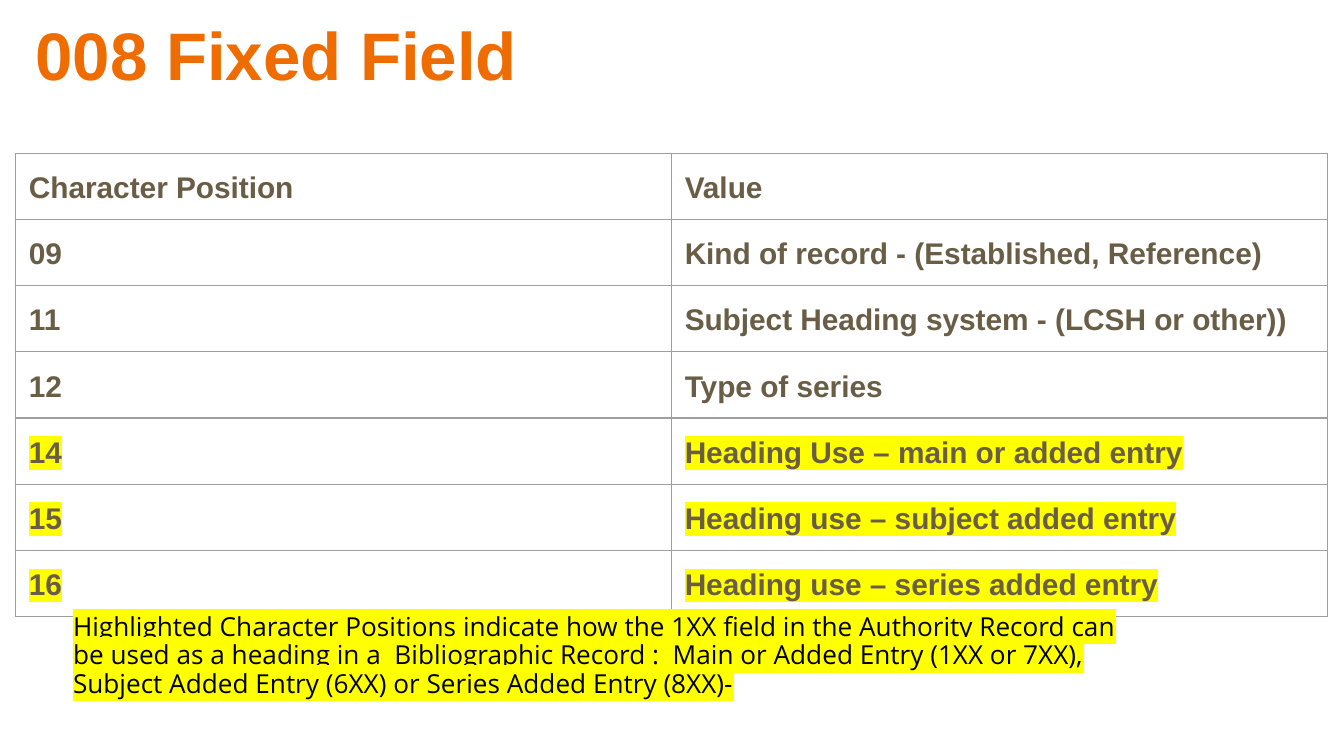
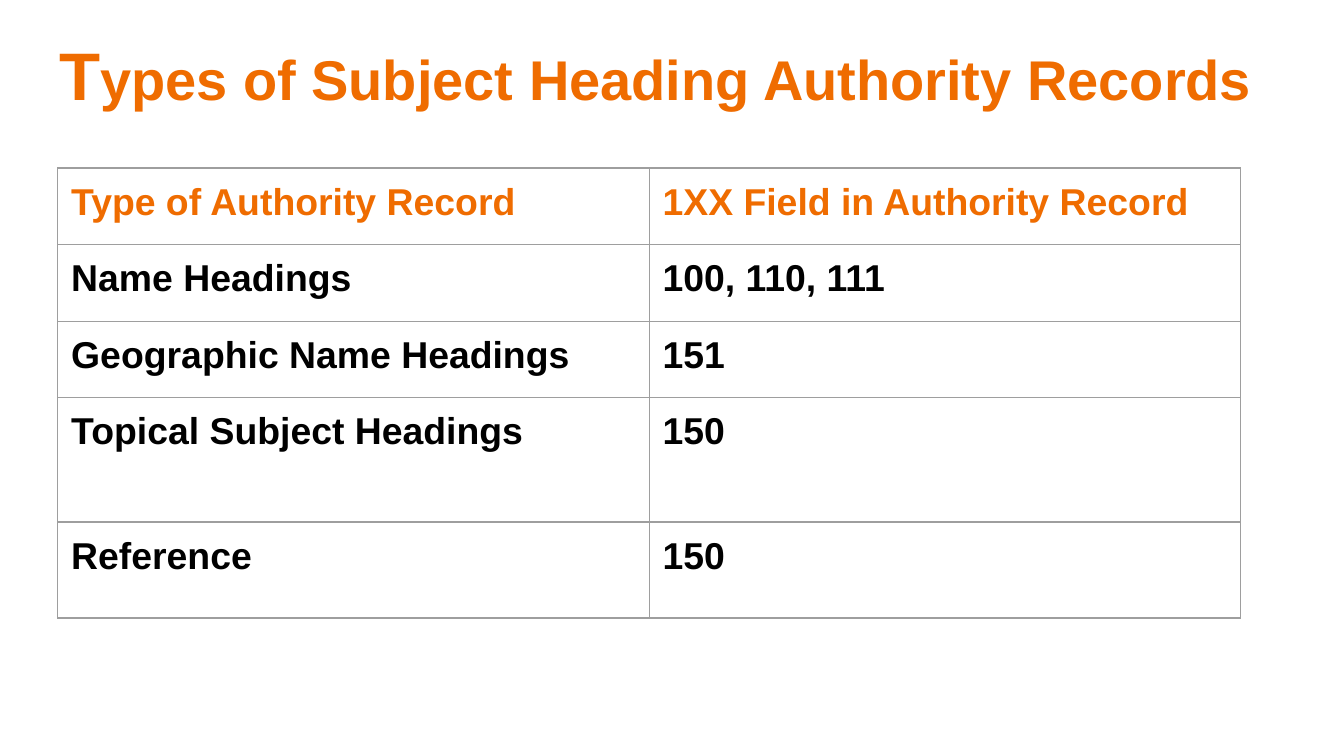
from lxml import etree
from pptx import Presentation
from pptx.dml.color import RGBColor
from pptx.enum.text import MSO_ANCHOR, MSO_AUTO_SIZE, PP_ALIGN
from pptx.oxml.ns import qn
from pptx.util import Pt

PX = 4572
INSET = 20
TITLE_ONLY = 5
TOP = MSO_ANCHOR.TOP
NO_FIT = MSO_AUTO_SIZE.NONE
LEFT = PP_ALIGN.LEFT

ORANGE = RGBColor(0xEF, 0x6C, 0x00)
BROWN = RGBColor(0x69, 0x5D, 0x46)
BLACK = RGBColor(0x00, 0x00, 0x00)
GREY = RGBColor(0x9E, 0x9E, 0x9E)
YELLOW = RGBColor(0xFF, 0xFF, 0x00)

FIXED_FIELD_ROWS = [
    ("Character Position", "Value"),
    ("09", "Kind of record - (Established, Reference)"),
    ("11", "Subject Heading system - (LCSH or other))"),
    ("12", "Type of series"),
    ("14", "Heading Use – main or added entry"),
    ("15", "Heading use – subject added entry"),
    ("16", "Heading use – series added entry"),
]
HIGHLIGHTED_POSITIONS = ("14", "15", "16")
HIGHLIGHT_NOTE = (
    "Highlighted Character Positions indicate how the 1XX field in the "
    "Authority Record can be used as a heading in a  Bibliographic Record :  "
    "Main or Added Entry (1XX or 7XX), Subject Added Entry (6XX) or "
    "Series Added Entry (8XX)-"
)
RECORD_TYPE_ROWS = [
    ("Type of Authority Record", "1XX Field in Authority Record"),
    ("Name Headings", "100, 110, 111"),
    ("Geographic Name Headings", "151"),
    ("Topical Subject Headings", "150"),
    ("Reference", "150"),
]
RECORD_TYPE_HEIGHTS = [114, 114, 114, 185, 143]


def emu(box):
    """Turn a box in px into EMU lengths."""
    return [length * PX for length in box]


def style_run(run, size, color, bold=True, face="Arial", highlight=None):
    """Format one run, with an optional highlight behind it."""
    run.font.size = Pt(size)
    run.font.bold = bold
    run.font.name = face
    run.font.color.rgb = color
    if highlight is not None:
        mark = etree.Element(qn("a:highlight"))
        etree.SubElement(mark, qn("a:srgbClr"), val=str(highlight))
        run.font.fill._xPr.find(qn("a:solidFill")).addnext(mark)


def set_insets(holder, bottom=INSET):
    """Give a text frame or a cell its insets and top anchor."""
    holder.margin_left = holder.margin_right = holder.margin_top = INSET * PX
    holder.margin_bottom = bottom * PX
    holder.vertical_anchor = TOP


def prepare_frame(frame):
    """Make a text frame wrap at a fixed size."""
    set_insets(frame)
    frame.word_wrap = True
    frame.auto_size = NO_FIT


def add_title(slide, box, parts):
    """Fill the title placeholder with (text, size) parts."""
    title = slide.shapes.title
    title.left, title.top, title.width, title.height = emu(box)
    prepare_frame(title.text_frame)
    paragraph = title.text_frame.paragraphs[0]
    paragraph.alignment = LEFT
    for text, size in parts:
        run = paragraph.add_run()
        run.text = text
        style_run(run, size, ORANGE)


def draw_borders(cell):
    """Draw thin grey lines on all four sides of a cell."""
    properties = cell._tc.get_or_add_tcPr()
    for index, side in enumerate(("a:lnL", "a:lnR", "a:lnT", "a:lnB")):
        line = etree.Element(qn(side), w=str(Pt(0.75)))
        fill = etree.SubElement(line, qn("a:solidFill"))
        etree.SubElement(fill, qn("a:srgbClr"), val=str(GREY))
        properties.insert(index, line)


def add_grid(slide, box, rows, size, header_color, body_color,
             heights=(), bottom=INSET, spacing=None, highlighted=()):
    """Add a bordered table with equal columns; rows are equal unless given."""
    table = slide.shapes.add_table(len(rows), len(rows[0]), *emu(box)).table
    table.first_row = table.horz_banding = False
    for row, height in zip(table.rows, heights):
        row.height = height * PX
    for row_index, texts in enumerate(rows):
        color = body_color if row_index else header_color
        highlight = YELLOW if texts[0] in highlighted else None
        for column_index, text in enumerate(texts):
            cell = table.cell(row_index, column_index)
            cell.fill.background()
            draw_borders(cell)
            set_insets(cell, bottom)
            paragraph = cell.text_frame.paragraphs[0]
            paragraph.text = text
            paragraph.line_spacing = spacing
            style_run(paragraph.runs[0], size, color, highlight=highlight)


def add_note(slide, box, text):
    """Add the highlighted note below the table."""
    frame = slide.shapes.add_textbox(*emu(box)).text_frame
    prepare_frame(frame)
    frame.text = text
    paragraph = frame.paragraphs[0]
    paragraph.line_spacing = 0.9
    style_run(paragraph.runs[0], 14, BLACK, bold=False,
              face="Open Sans", highlight=YELLOW)


def build_fixed_field(slide):
    """Build the slide on the 008 fixed field."""
    add_title(slide, (33, 0, 1864, 154), [("008 Fixed Field", 36)])
    add_grid(slide, (23, 228, 1952, 690), FIXED_FIELD_ROWS, 16, BROWN, BROWN,
             bottom=0, spacing=1.15, highlighted=HIGHLIGHTED_POSITIONS)
    add_note(slide, (89, 894, 1604, 188), HIGHLIGHT_NOTE)


def build_record_types(slide):
    """Build the slide on types of authority records."""
    add_title(slide, (68, 30, 1864, 154),
              [("T", 36), ("ypes of Subject Heading Authority Records", 30)])
    add_grid(slide, (86, 250, 1760, 670), RECORD_TYPE_ROWS, 20, ORANGE, BLACK,
             heights=RECORD_TYPE_HEIGHTS)


def main():
    """Build and save the presentation."""
    deck = Presentation()
    deck.slide_width, deck.slide_height = emu((2000, 1125))
    for build in (build_fixed_field, build_record_types):
        build(deck.slides.add_slide(deck.slide_layouts[TITLE_ONLY]))
    deck.save("out.pptx")


if __name__ == "__main__":
    main()
